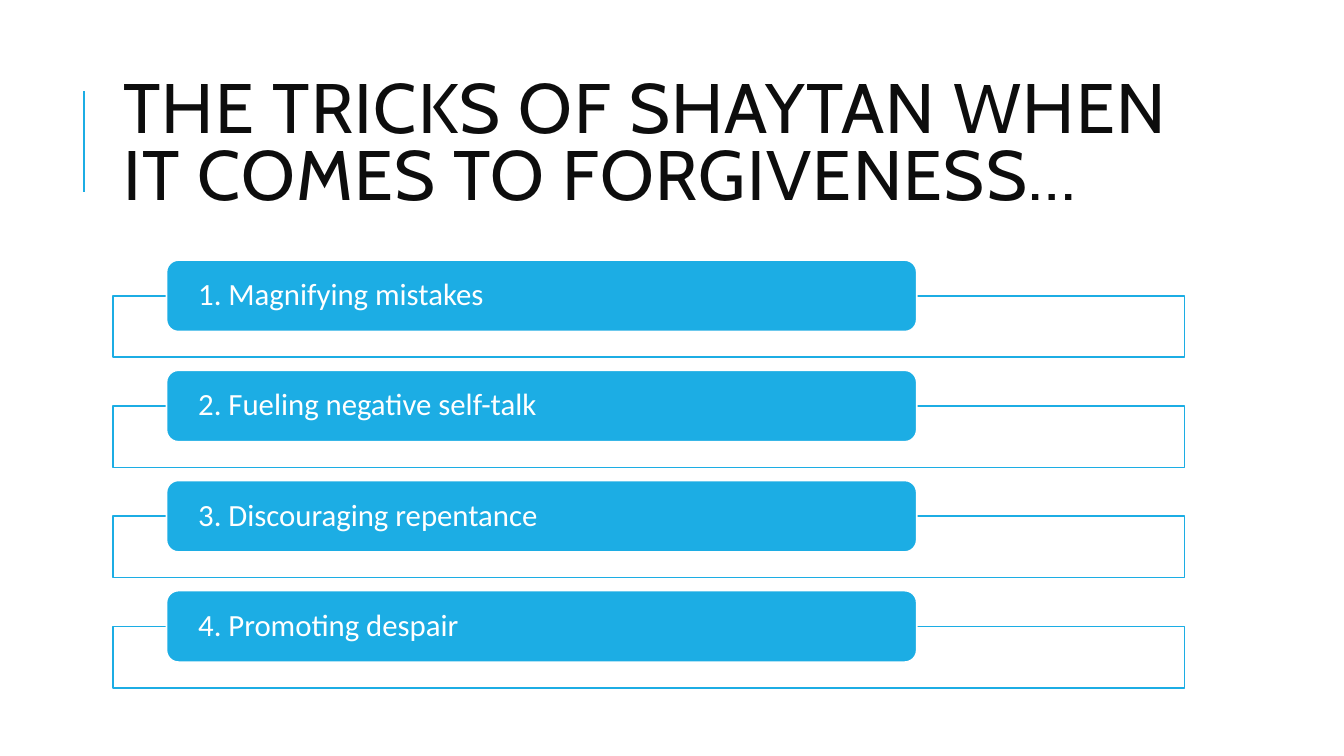
"""Build a title slide section with four numbered tricks on framed bars."""
import pptx
import pptx.util
import pptx.dml.color
import pptx.enum.shapes
import pptx.enum.text
import pptx.oxml
import lxml.etree

Inches = pptx.util.Inches
COLOURS = {"accent": "1CADE4", "white": "FFFFFF", "ink": "0D0D0D"}
TRICKS = [
    "1. Magnifying mistakes",
    "2. Fueling negative self-talk",
    "3. Discouraging repentance",
    "4. Promoting despair",
]
LEFT, WIDTH = 1.12, 10.63
BAR_LEFT, BAR_WIDTH, BAR_HEIGHT = LEFT + WIDTH * 0.05, WIDTH * 0.7, 0.71
FIRST_ROW, ROW_PITCH = 2.58, 1.093
FRAME_DROP, FRAME_HEIGHT = BAR_HEIGHT / 2, 0.61


def colour(name):
    return pptx.dml.color.RGBColor.from_string(COLOURS[name])


def add_panel(kind, left, top, width, height, fill, line):
    panel = slide.shapes.add_shape(
        kind, Inches(left), Inches(top), Inches(width), Inches(height))
    panel.shadow.inherit = False
    panel.fill.solid()
    panel.fill.fore_color.rgb = colour(fill)
    panel.line.color.rgb = colour(line)
    panel.line.width = pptx.util.Pt(1.25)
    return panel


deck = pptx.Presentation()
deck.slide_width, deck.slide_height = Inches(13.33), Inches(7.5)
slide = deck.slides.add_slide(deck.slide_layouts[5])

rule = slide.shapes.add_connector(
    pptx.enum.shapes.MSO_CONNECTOR.STRAIGHT,
    Inches(0.83), Inches(1.9), Inches(0.83), Inches(0.9))
rule.line.color.rgb = colour("accent")
rule.line.width = pptx.util.Pt(1.5)
lxml.etree.SubElement(
    rule._element.spPr, pptx.oxml.ns.qn("a:effectLst"))

title = slide.shapes.title
title.left, title.top = Inches(LEFT), Inches(0.64)
title.width, title.height = Inches(WIDTH), Inches(1.64)
title.text_frame.text = "THE TRICKS OF SHAYTAN WHEN IT COMES TO FORGIVENESS…"
title.text_frame.word_wrap = True
title.text_frame.auto_size = pptx.enum.text.MSO_AUTO_SIZE.NONE
title.text_frame.vertical_anchor = pptx.enum.text.MSO_ANCHOR.MIDDLE
para = title.text_frame.paragraphs[0]
para.alignment = pptx.enum.text.PP_ALIGN.LEFT
para.line_spacing = 0.8
span = para.runs[0]
span.font.name = "Cabin"
span.font.size = pptx.util.Pt(50)
span.font.color.rgb = colour("ink")
span.font._element.set("spc", "100")

for row, trick in enumerate(TRICKS):
    top = FIRST_ROW + row * ROW_PITCH
    frame = add_panel(
        pptx.enum.shapes.MSO_SHAPE.RECTANGLE,
        LEFT, top + FRAME_DROP, WIDTH, FRAME_HEIGHT, "white", "accent")
    fill_colour = frame._element.spPr.find(
        ".//" + pptx.oxml.ns.qn("a:srgbClr"))
    lxml.etree.SubElement(
        fill_colour, pptx.oxml.ns.qn("a:alpha")).set("val", "90000")

    bar = add_panel(
        pptx.enum.shapes.MSO_SHAPE.ROUNDED_RECTANGLE,
        BAR_LEFT, top, BAR_WIDTH, BAR_HEIGHT, "accent", "white")
    text = bar.text_frame
    text.text = trick
    text.word_wrap = True
    text.vertical_anchor = pptx.enum.text.MSO_ANCHOR.MIDDLE
    text.margin_left = text.margin_right = Inches(0.28)
    text.margin_top = text.margin_bottom = 0
    para = text.paragraphs[0]
    para.alignment = pptx.enum.text.PP_ALIGN.LEFT
    para.line_spacing = 0.9
    span = para.runs[0]
    span.font.name = "Calibri"
    span.font.size = pptx.util.Pt(22)
    span.font.color.rgb = colour("white")

deck.save("out.pptx")
